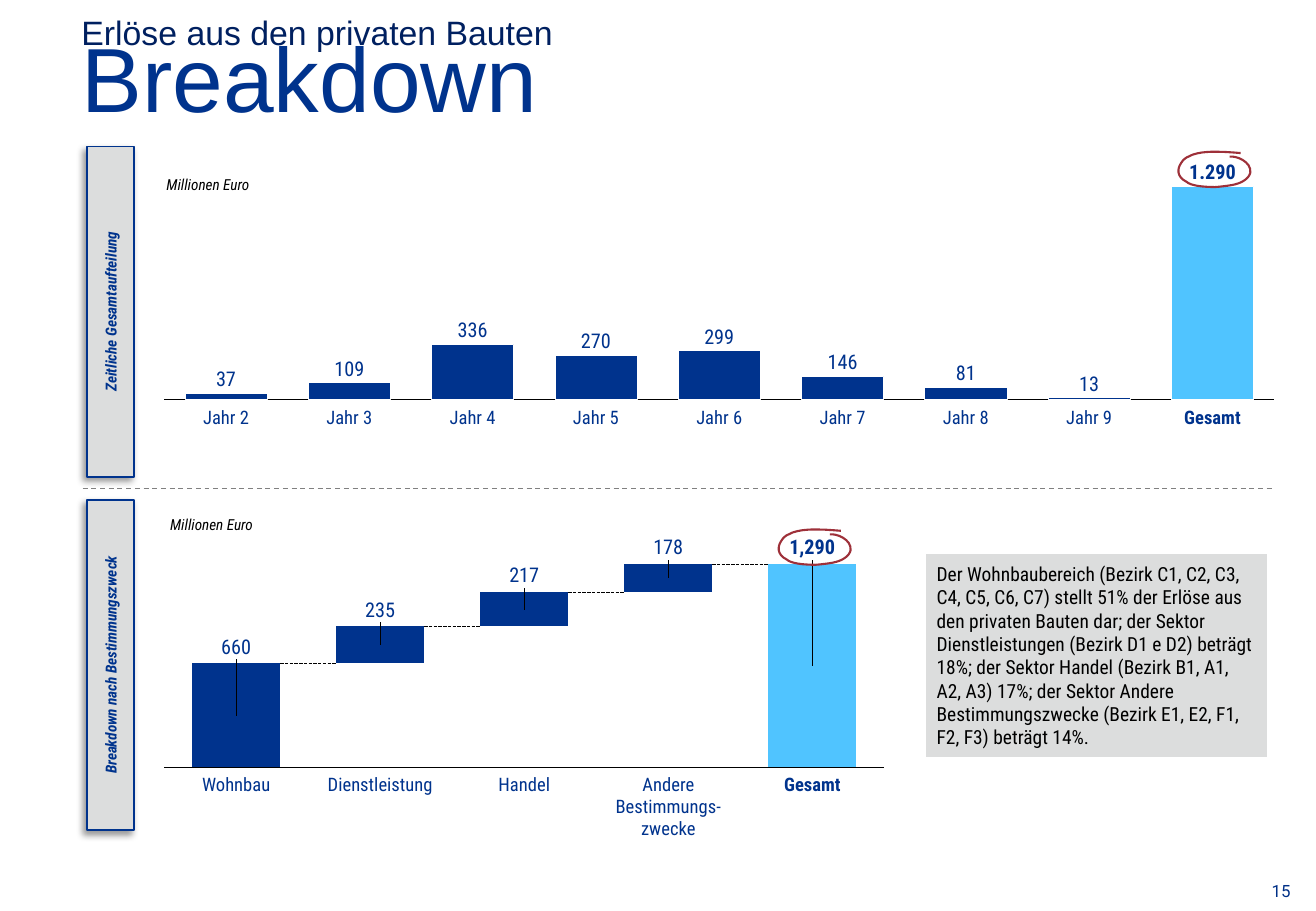
from pptx import Presentation
from pptx.chart.data import CategoryChartData
from pptx.dml.color import RGBColor
from pptx.enum.chart import XL_CHART_TYPE, XL_TICK_LABEL_POSITION, XL_TICK_MARK
from pptx.enum.dml import MSO_LINE
from pptx.enum.shapes import MSO_CONNECTOR, MSO_SHAPE
from pptx.enum.text import MSO_ANCHOR, PP_ALIGN
from pptx.oxml import parse_xml
from pptx.oxml.ns import nsdecls
from pptx.util import Inches, Pt

NAVY = RGBColor(0x00, 0x33, 0x8D)
DARK_NAVY = RGBColor(0x00, 0x20, 0x60)
PAGE_BLUE = RGBColor(0x00, 0x30, 0x87)
SKY = RGBColor(0x50, 0xC4, 0xFF)
GREY = RGBColor(0xDC, 0xDD, 0xDD)
MID_GREY = RGBColor(0x80, 0x80, 0x80)
RED = RGBColor(0x9E, 0x30, 0x39)
BLACK = RGBColor(0, 0, 0)
WHITE = RGBColor(255, 255, 255)
CONDENSED = "Roboto Condensed"

YEAR_CHART = (1.26, 1.44, 9.31, 1.94)
YEAR_PLOT = (0.01, 0.047, 0.981, 0.907)
YEARS = [
    ("Jahr 2", 3, "37"), ("Jahr 3", 8, "109"), ("Jahr 4", 26, "336"),
    ("Jahr 5", 21, "270"), ("Jahr 6", 23, "299"), ("Jahr 7", 11, "146"),
    ("Jahr 8", 6, "81"), ("Jahr 9", 1, "13"), ("Gesamt", 100, "1.290"),
]
USE_CHART = (1.26, 4.39, 6.11, 2.02)
USE_PLOT = (0.015, 0.125, 0.97, 0.83)
USES = [("Wohnbau", 660), ("Dienstleistung", 235), ("Handel", 217),
        ("Andere\nBestimmungs-\nzwecke", 178)]
USE_GAP = 64
TOTAL = sum(value for _, value in USES)

RING_START = (10.21, 1.26)
RING_CURVES = [
    ((10.2, 1.26), (10.1, 1.25), (10.03, 1.25)),
    ((10.03, 1.25), (9.86, 1.24), (9.78, 1.29)),
    ((9.78, 1.29), (9.74, 1.3), (9.71, 1.36)),
    ((9.7, 1.38), (9.67, 1.45), (9.77, 1.5)),
    ((9.78, 1.51), (9.83, 1.54), (10, 1.54)),
    ((10, 1.54), (10.14, 1.53), (10.19, 1.51)),
    ((10.22, 1.5), (10.28, 1.47), (10.29, 1.42)),
    ((10.3, 1.33), (10.17, 1.28), (10.12, 1.29)),
]
COMMENT = (
    "Der Wohnbaubereich (Bezirk C1, C2, C3, C4, C5, C6, C7) stellt 51% der Erlöse "
    "aus den privaten Bauten dar; der Sektor Dienstleistungen (Bezirk D1 e D2) "
    "beträgt 18%; der Sektor Handel (Bezirk B1, A1, A2, A3) 17%; der Sektor Andere "
    "Bestimmungszwecke (Bezirk E1, E2, F1, F2, F3) beträgt 14%."
)


def style_font(font, size, color, name=CONDENSED, bold=False, italic=False):
    """Set the look of a font."""
    font.size, font.name, font.bold, font.italic = Pt(size), name, bold, italic
    font.color.rgb = color


def add_text(slide, text, box, size, color=NAVY, name=CONDENSED, bold=False, italic=False,
             align=PP_ALIGN.LEFT, anchor=MSO_ANCHOR.TOP, spacing=None):
    """Add a text box without margins."""
    frame = slide.shapes.add_textbox(*map(Inches, box)).text_frame
    frame.margin_left = frame.margin_right = frame.margin_top = frame.margin_bottom = 0
    frame.word_wrap, frame.vertical_anchor = True, anchor
    frame.text = text
    for paragraph in frame.paragraphs:
        paragraph.alignment, paragraph.line_spacing = align, spacing
        for run in paragraph.runs:
            style_font(run.font, size, color, name, bold, italic)


def add_label(slide, text, center, top, size, height=0.18, bold=False,
              anchor=MSO_ANCHOR.TOP, width=1):
    """Add a chart label centred on a column."""
    add_text(slide, text, (center - width / 2, top, width, height), size, bold=bold,
             align=PP_ALIGN.CENTER, anchor=anchor)


def add_panel(slide, kind, text, box, size, color, outline, width, align,
              bold=False, italic=False):
    """Add a grey panel with text."""
    shape = slide.shapes.add_shape(kind, *map(Inches, box))
    shape.shadow.inherit = False
    shape.fill.solid()
    shape.fill.fore_color.rgb = GREY
    shape.line.color.rgb, shape.line.width = outline, Pt(width)
    frame = shape.text_frame
    frame.word_wrap, frame.vertical_anchor = True, MSO_ANCHOR.MIDDLE
    frame.text = text
    frame.paragraphs[0].alignment = align
    style_font(frame.paragraphs[0].runs[0].font, size, color, bold=bold, italic=italic)
    return shape


def add_side_tab(slide, text, top):
    """Add an upright section tab with a soft shadow."""
    tab = add_panel(slide, MSO_SHAPE.RECTANGLE, text, (-0.45, top, 2.72, 0.39), 9, NAVY,
                    NAVY, 1, PP_ALIGN.CENTER, bold=True, italic=True)
    tab.rotation = 270
    effects = tab.element.spPr.find("{*}effectLst")
    effects.append(parse_xml(
        f'<a:outerShdw {nsdecls("a")} blurRad="{Pt(4)}" dist="{Pt(3)}" dir="8100000" '
        'algn="tr" rotWithShape="0"><a:srgbClr val="000000"><a:alpha val="40000"/>'
        '</a:srgbClr></a:outerShdw>'))


def add_dashed_line(slide, left, right, y, color, width, dash):
    """Add a horizontal dashed line."""
    line = slide.shapes.add_connector(
        MSO_CONNECTOR.STRAIGHT, Inches(left), Inches(y), Inches(right), Inches(y))
    line.line.color.rgb, line.line.width = color, Pt(width)
    line.line.dash_style = dash
    line.element.spPr.append(parse_xml(f'<a:effectLst {nsdecls("a")}/>'))


def add_ring(slide, dx=0, dy=0, steps=8):
    """Add the hand-drawn ring, shifted by dx and dy."""
    points, start = [RING_START], RING_START
    for first, second, end in RING_CURVES:
        for step in range(1, steps + 1):
            t = step / steps
            weights = ((1 - t) ** 3, 3 * t * (1 - t) ** 2, 3 * t * t * (1 - t), t ** 3)
            corners = (start, first, second, end)
            points.append(tuple(sum(w * corner[axis] for w, corner in zip(weights, corners))
                                for axis in (0, 1)))
        start = end
    vertices = [(Inches(x + dx), Inches(y + dy)) for x, y in points]
    builder = slide.shapes.build_freeform(*vertices[0])
    builder.add_line_segments(vertices[1:], close=False)
    ring = builder.convert_to_shape()
    ring.shadow.inherit = False
    ring.fill.background()
    ring.line.color.rgb, ring.line.width = RED, Pt(1.25)


def layout_xml(**values):
    """Return a manual chart layout element."""
    items = "".join(f'<c:{key} val="{value}"/>' for key, value in values.items())
    return parse_xml(f'<c:layout {nsdecls("c")}><c:manualLayout>{items}'
                     '</c:manualLayout></c:layout>')


def add_columns(slide, box, plot, series_values, maximum, gap):
    """Add a stacked column chart with only its base line showing."""
    data = CategoryChartData(number_format="#,##0")
    data.categories = [str(i + 1) for i in range(len(series_values[0]))]
    for number, values in enumerate(series_values, 1):
        data.add_series(f"Series {number}", values)
    chart = slide.shapes.add_chart(
        XL_CHART_TYPE.COLUMN_STACKED, *map(Inches, box), data).chart
    chart.has_legend = chart.has_title = False
    style_font(chart.font, 10, BLACK, "Arial")
    columns = chart.plots[0]
    columns.gap_width, columns.overlap, columns.vary_by_categories = gap, 100, False
    value_axis, category_axis = chart.value_axis, chart.category_axis
    value_axis.minimum_scale, value_axis.maximum_scale = 0, maximum
    value_axis.has_major_gridlines = value_axis.visible = False
    category_axis.tick_label_position = XL_TICK_LABEL_POSITION.NONE
    category_axis.major_tick_mark = category_axis.minor_tick_mark = XL_TICK_MARK.NONE
    category_axis.format.line.color.rgb = BLACK
    category_axis.format.line.width = Pt(0.75)
    area = chart.element.xpath(".//c:plotArea")[0]
    for layout in area.xpath("./c:layout"):
        area.remove(layout)
    area.insert(0, layout_xml(layoutTarget="inner", xMode="edge", yMode="edge",
                              **dict(zip("xywh", plot))))
    return chart


def paint(item, color):
    """Fill a chart series or point."""
    item.format.fill.solid()
    item.format.fill.fore_color.rgb = color


def column_places(box, plot, count):
    """Return column centres, base line and plot height on the slide."""
    left, top, width, height = box
    x, y, w, h = plot
    pitch = width * w / count
    centers = [left + width * x + pitch * (i + 0.5) for i in range(count)]
    return centers, top + height * (y + h), height * h


def add_year_section(slide):
    """Add the columns by year with their labels."""
    chart = add_columns(slide, YEAR_CHART, YEAR_PLOT, [[share for _, share, _ in YEARS]], 100, 50)
    series = chart.plots[0].series[0]
    for item, color in ((series, NAVY), (series.points[len(YEARS) - 1], SKY)):
        paint(item, color)
        item.format.line.color.rgb, item.format.line.width = WHITE, Pt(0.25)
    centers, base, height = column_places(YEAR_CHART, YEAR_PLOT, len(YEARS))
    for center, (name, share, amount) in zip(centers, YEARS):
        bold = name == "Gesamt"
        add_label(slide, name, center, 3.34, 11, bold=bold)
        add_label(slide, amount, center, base - height * share / 100 - 0.22, 12, 0.2,
                  bold, MSO_ANCHOR.BOTTOM)


def add_use_section(slide):
    """Add the waterfall by use with its labels and connectors."""
    values = [value for _, value in USES]
    levels = [sum(values[:i + 1]) for i in range(len(values))]
    last = len(values)
    chart = add_columns(slide, USE_CHART, USE_PLOT, [
        [values[0]] + levels[:-1] + [TOTAL], [None] + values[1:] + [None]], TOTAL, USE_GAP)
    bases, steps = chart.plots[0].series
    bases.format.fill.background()
    paint(bases.points[0], NAVY)
    paint(bases.points[last], SKY)
    paint(steps, NAVY)
    for series, shown in ((bases, (0, last)), (steps, range(1, last))):
        series.data_labels.show_value = False
        for index in shown:
            label = series.points[index].data_label
            style_font(label.font, 12, NAVY, bold=index == last)
    labelled = [values[0], TOTAL] + values[1:]
    for label, value in zip(chart.element.xpath(".//c:dLbl"), labelled):
        rise = value / TOTAL * USE_PLOT[3] / 2 + 0.065
        label.insert(1, layout_xml(x=0, y=round(-rise, 3)))

    centers, base, height = column_places(USE_CHART, USE_PLOT, last + 1)
    half = (centers[1] - centers[0]) / (1 + USE_GAP / 100) / 2
    for center, following, level in zip(centers, centers[1:], levels):
        add_dashed_line(slide, center + half, following - half, base - height * level / TOTAL,
                        BLACK, 0.25, MSO_LINE.LONG_DASH)
    for center, name in zip(centers, [name for name, _ in USES] + ["Gesamt"]):
        add_label(slide, name, center, 6.36, 11, 0.18 * (name.count("\n") + 1),
                  name == "Gesamt")


def main():
    """Build the slide and save it."""
    presentation = Presentation()
    presentation.slide_width, presentation.slide_height = Inches(10.83), Inches(7.5)
    slide = presentation.slides.add_slide(presentation.slide_layouts[6])
    add_text(slide, "15", (9.2, 7.26, 1.42, 0.16), 10, PAGE_BLUE, "Roboto",
             align=PP_ALIGN.RIGHT, anchor=MSO_ANCHOR.BOTTOM)
    for text, box, size, color in (
            ("Erlöse aus den privaten Bauten", (0.67, 0.09, 9.5, 0.33), 20, DARK_NAVY),
            ("Breakdown", (0.67, 0.26, 9.5, 0.79), 54, NAVY)):
        add_text(slide, text, box, size, color, "Arial", anchor=MSO_ANCHOR.BOTTOM, spacing=0.7)
    add_year_section(slide)
    add_dashed_line(slide, 0.68, 10.48, 4.02, MID_GREY, 0.75, MSO_LINE.DASH)
    add_use_section(slide)
    add_side_tab(slide, "Zeitliche Gesamtaufteilung", 2.37)
    add_side_tab(slide, "Breakdown nach Bestimmungszweck", 5.28)
    for left, top in ((1.37, 1.44), (1.4, 4.24)):
        add_text(slide, "Millionen Euro", (left, top, 0.95, 0.15), 9, BLACK, italic=True)
    comment = add_panel(slide, MSO_SHAPE.PENTAGON, COMMENT, (7.61, 4.55, 2.83, 1.69), 11.5,
                        BLACK, WHITE, 1.5, PP_ALIGN.LEFT)
    comment.adjustments[0] = 0
    add_ring(slide)
    add_ring(slide, -3.29, 3.11)
    presentation.save("out.pptx")


if __name__ == "__main__":
    main()
